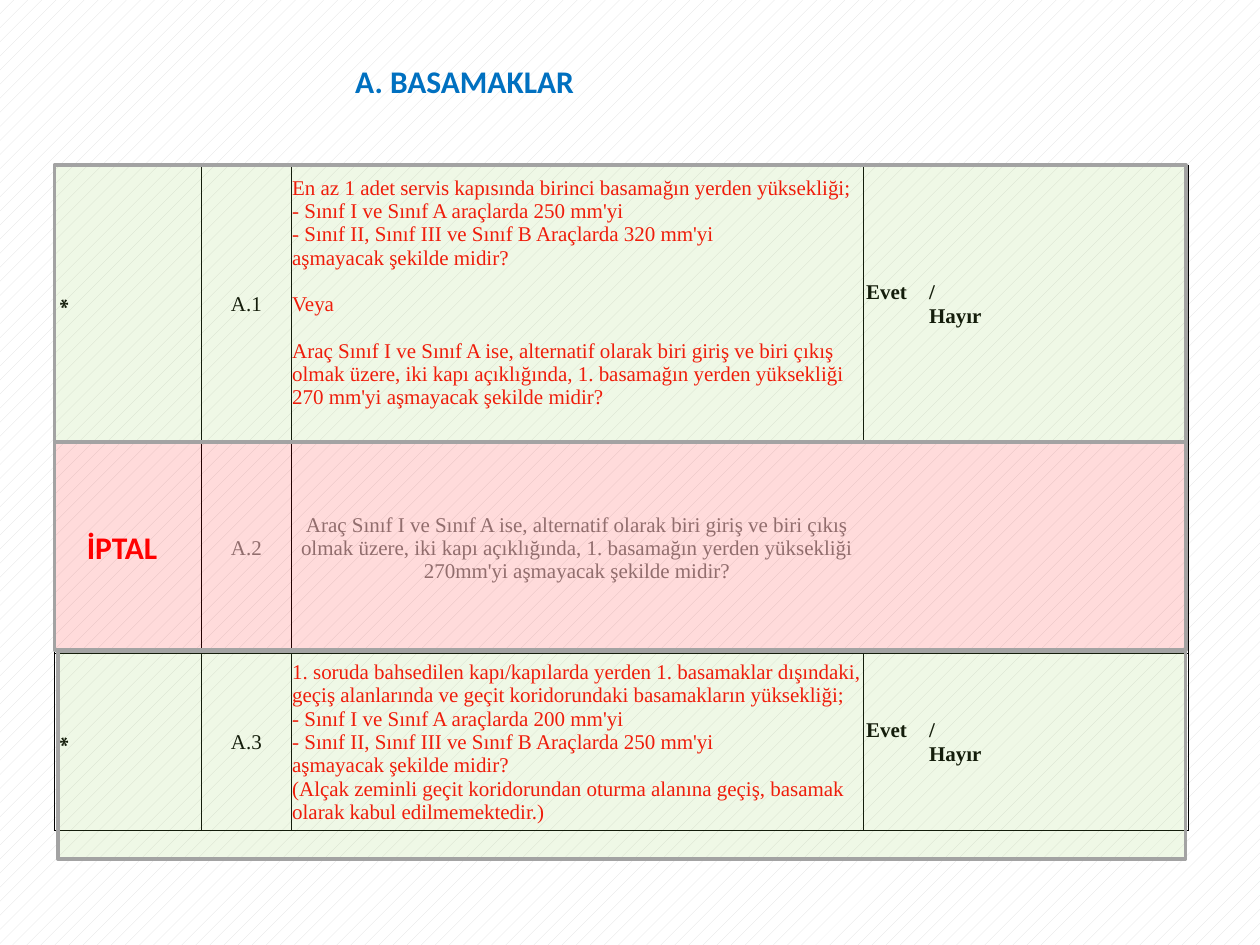
from dataclasses import dataclass

from lxml import etree
from pptx import Presentation
from pptx.dml import color
from pptx.enum import dml, shapes, text
from pptx.oxml import ns
from pptx.util import Pt


@dataclass(frozen=True)
class Theme:
    heading_font: str = "Calibri"
    body_font: str = "Times New Roman"
    heading_size: float = 18
    body_size: float = 12
    line_height: float = 13.3
    title: str = "0070C0"
    alert: str = "FF0000"
    ink: str = "000000"
    muted: str = "808080"
    accepted: str = "92D050"
    frame: str = "A3A3A3"
    pattern: str = "E0E0E0"
    paper: str = "FFFFFF"
    overlay_alpha: int = 14000


THEME = Theme()
TABLE_LEFT, TABLE_TOP = 31, 94.3
COLUMNS = (84.3, 51, 327, 90.7, 95)
ROWS = (158.8, 120, 101.2)
QUESTION_1 = (
    "En az 1 adet servis kapısında birinci basamağın yerden yüksekliği;",
    "- Sınıf I ve Sınıf A araçlarda 250 mm'yi",
    "- Sınıf II, Sınıf III ve Sınıf B Araçlarda 320 mm'yi",
    "aşmayacak şekilde midir?",
    "Veya",
    "Araç Sınıf I ve Sınıf A ise, alternatif olarak biri giriş ve biri çıkış "
    "olmak üzere, iki kapı açıklığında, 1. basamağın yerden yüksekliği "
    "270 mm'yi aşmayacak şekilde midir?",
)
QUESTION_2 = (
    "Araç Sınıf I ve Sınıf A ise, alternatif olarak biri giriş ve biri çıkış "
    "olmak üzere, iki kapı açıklığında, 1. basamağın yerden yüksekliği "
    "270mm'yi aşmayacak şekilde midir?",
)
QUESTION_3 = (
    "1. soruda bahsedilen kapı/kapılarda yerden 1. basamaklar dışındaki, "
    "geçiş alanlarında ve geçit koridorundaki basamakların yüksekliği;",
    "- Sınıf I ve Sınıf A araçlarda 200 mm'yi",
    "- Sınıf II, Sınıf III ve Sınıf B Araçlarda 250 mm'yi",
    "aşmayacak şekilde midir?",
    "(Alçak zeminli geçit koridorundan oturma alanına geçiş, basamak "
    "olarak kabul edilmemektedir.)",
)


def rgb(value):
    return color.RGBColor.from_string(value)


def write_text(frame, lines, *, ink=THEME.ink, font=THEME.body_font,
               size=THEME.body_size, bold=False, centered=False,
               spaced=(), indents=(), tab=None):
    for index, line in enumerate(lines):
        paragraph = frame.paragraphs[0] if index == 0 else frame.add_paragraph()
        paragraph.alignment = text.PP_ALIGN.CENTER if centered else text.PP_ALIGN.LEFT
        paragraph.space_before = Pt(THEME.line_height if index in spaced else 0)
        run = paragraph.add_run()
        run.text = line
        run.font.name, run.font.size, run.font.bold = font, Pt(size), bold
        run.font.color.rgb = rgb(ink)
        properties = paragraph._p.get_or_add_pPr()
        if indents:
            properties.set("marL", str(Pt(indents[index])))
            properties.set("indent", "0")
        if tab:
            stops = etree.SubElement(properties, ns.qn("a:tabLst"))
            etree.SubElement(stops, ns.qn("a:tab"), pos=str(Pt(tab)), algn="l")


def write_heading(frame, line, ink, wrap):
    frame.word_wrap = wrap
    frame.auto_size = text.MSO_AUTO_SIZE.SHAPE_TO_FIT_TEXT
    frame.vertical_anchor = text.MSO_ANCHOR.TOP
    write_text(frame, [line], ink=ink, font=THEME.heading_font,
               size=THEME.heading_size, bold=True)


def place(shape, left, top, width, height):
    shape.left, shape.top = Pt(left), Pt(top)
    shape.width, shape.height = Pt(width), Pt(height)


def set_borders(cell, hidden):
    properties = cell._tc.get_or_add_tcPr()
    for index, side in enumerate("LRTB"):
        line = etree.Element(ns.qn(f"a:ln{side}"), w=str(Pt(0.5)))
        if side in hidden:
            etree.SubElement(line, ns.qn("a:noFill"))
        else:
            fill = etree.SubElement(line, ns.qn("a:solidFill"))
            etree.SubElement(fill, ns.qn("a:srgbClr"), val=THEME.ink)
        properties.insert(index, line)


def hidden_sides(row, column):
    first_open = 2 if row == 1 else 3
    return ("L" if column > first_open else "") + ("R" if first_open <= column < 4 else "")


def add_grid(slide):
    table = slide.shapes.add_table(
        len(ROWS), len(COLUMNS), Pt(TABLE_LEFT), Pt(TABLE_TOP),
        Pt(sum(COLUMNS)), Pt(sum(ROWS))).table
    table.first_row = table.horz_banding = False
    for column, width in zip(table.columns, COLUMNS):
        column.width = Pt(width)
    for row_index, height in enumerate(ROWS):
        table.rows[row_index].height = Pt(height)
        for column_index in range(len(COLUMNS)):
            cell = table.cell(row_index, column_index)
            cell.fill.background()
            cell.vertical_anchor = text.MSO_ANCHOR.MIDDLE
            cell.margin_left = cell.margin_right = cell.margin_top = Pt(0.7)
            cell.margin_bottom = Pt(0)
            set_borders(cell, hidden_sides(row_index, column_index))
    return table


def fill_question(table, row, number, lines, *, ink=THEME.alert,
                  number_ink=THEME.ink, centered=False, spaced=()):
    write_text(table.cell(row, 1).text_frame, [number], ink=number_ink, centered=True)
    write_text(table.cell(row, 2).text_frame, lines, ink=ink,
               centered=centered, spaced=spaced)


def fill_answer(table, row):
    marker = table.cell(row, 0)
    marker._tc.get_or_add_tcPr().set("vert", "vert270")
    write_text(marker.text_frame, ["*"], bold=True, centered=True)
    write_text(table.cell(row, 3).text_frame, ["Evet\t/", "Hayır"],
               bold=True, indents=(1, 37), tab=66)


def add_overlay(slide, left, top, width, height, tint):
    shape = slide.shapes.add_shape(
        shapes.MSO_SHAPE.RECTANGLE, Pt(left), Pt(top), Pt(width), Pt(height))
    shape.shadow.inherit = False
    shape.fill.solid()
    shape.fill.fore_color.rgb = rgb(tint)
    tint_element = shape._element.spPr.find(f".//{ns.qn('a:srgbClr')}")
    etree.SubElement(tint_element, ns.qn("a:alpha"), val=str(THEME.overlay_alpha))
    shape.line.color.rgb = rgb(THEME.frame)
    shape.line.width = Pt(2)


def set_background(slide):
    fill = slide.background.fill
    fill.patterned()
    fill.pattern = dml.MSO_PATTERN.PERCENT_10
    fill.fore_color.rgb = rgb(THEME.pattern)
    fill.back_color.rgb = rgb(THEME.paper)


def main():
    presentation = Presentation()
    presentation.slide_width, presentation.slide_height = Pt(720), Pt(540)
    slide = presentation.slides.add_slide(presentation.slide_layouts[5])
    set_background(slide)

    title = slide.shapes.title
    place(title, 195.8, 31.7, 140.4, 29)
    write_heading(title.text_frame, "A. BASAMAKLAR", THEME.title, wrap=False)

    table = add_grid(slide)
    fill_question(table, 0, "A.1", QUESTION_1, spaced=(4, 5))
    table.cell(0, 2).margin_bottom = Pt(THEME.line_height)
    fill_question(table, 1, "A.2", QUESTION_2, ink=THEME.muted,
                  number_ink=THEME.muted, centered=True)
    fill_question(table, 2, "A.3", QUESTION_3)
    for row in (0, 2):
        fill_answer(table, row)

    add_overlay(slide, 31, 94.3, 646.6, 158.4, THEME.accepted)
    add_overlay(slide, 33.1, 372.2, 644.4, 118.8, THEME.accepted)
    label = slide.shapes.add_textbox(Pt(42.5), Pt(298), Pt(118.8), Pt(29))
    write_heading(label.text_frame, "İPTAL", THEME.alert, wrap=True)
    add_overlay(slide, 31, 252.7, 646.6, 118.8, THEME.alert)

    presentation.save("out.pptx")


if __name__ == "__main__":
    main()
